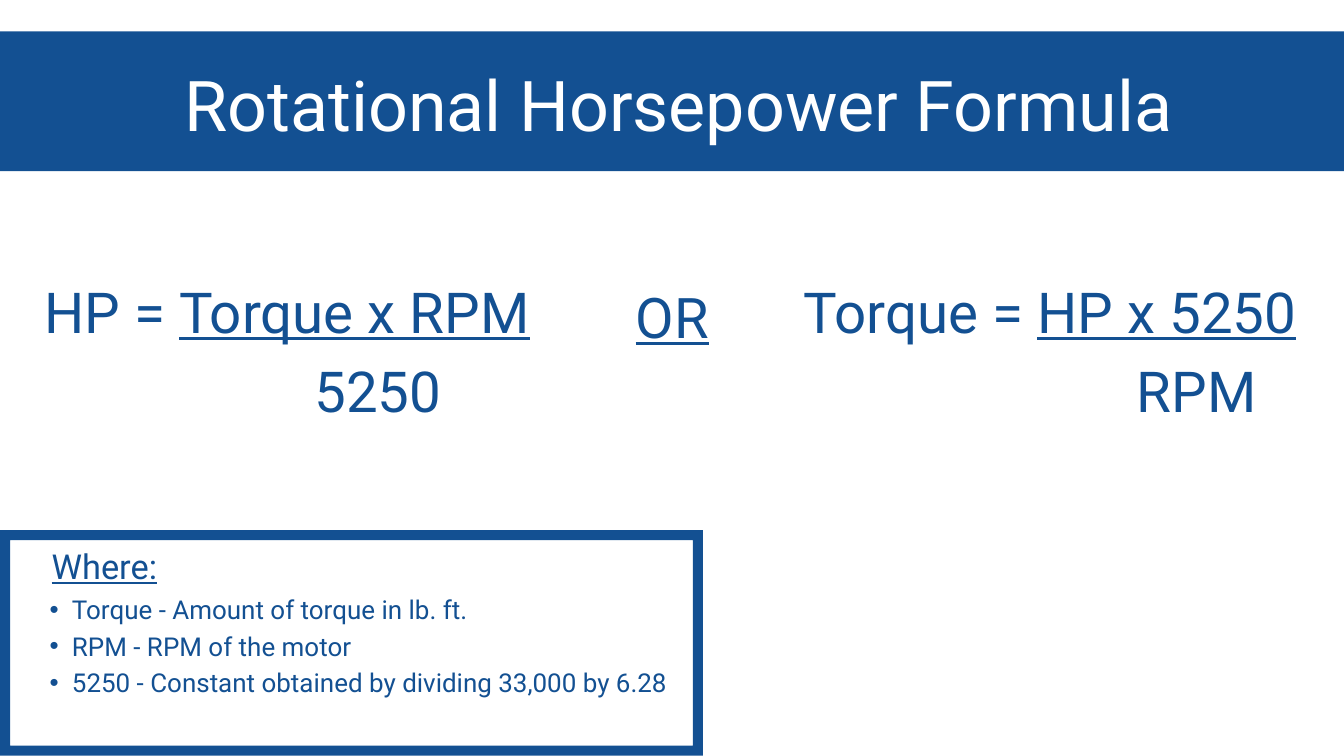
from lxml.etree import SubElement
from pptx import Presentation
from pptx.dml.color import RGBColor
from pptx.enum.shapes import MSO_SHAPE as Shape
from pptx.enum.text import PP_ALIGN as Align
from pptx.oxml.ns import qn
from pptx.util import Cm, Pt

# Content: a line is a list of (text, underlined) runs
TITLE = "Rotational Horsepower Formula"
WHERE = "Where:"
DEFINITIONS = [
    "Torque - Amount of torque in lb. ft.",
    "RPM - RPM of the motor",
    "5250 - Constant obtained by dividing 33,000 by 6.28",
]
# Result, numerator, denominator, denominator indent, box (all in cm)
FORMULAS = [
    ("HP = ", "Torque x RPM", "5250", 6.88, (1.04, 10.03, 19.61, 5.99)),
    ("Torque = ", "HP x 5250", "RPM", 11.1, (29.64, 10.03, 20.09, 5.94)),
]
COLORS = {"blue": "135092", "white": "FFFFFF"}
FONT = "Roboto"
FRAME_BOX = (0, 20.04, 26.57, 8.53)
FRAME_WIDTH = 0.38


def color(name):
    return RGBColor.from_string(COLORS[name])


def add_block(slide, preset, box):
    block = slide.shapes.add_shape(preset, *map(Cm, box))
    block.shadow.inherit = False
    block.fill.solid()
    block.fill.fore_color.rgb = color("blue")
    block.line.fill.background()
    return block


def add_lines(slide, box, lines, size, spacing, ink="blue", align=Align.CENTER):
    """Write one paragraph per line and return the paragraphs."""
    frame = slide.shapes.add_textbox(*map(Cm, box)).text_frame
    frame.word_wrap = True
    frame.margin_left = frame.margin_top = 0
    frame.margin_right = frame.margin_bottom = 0
    for index, runs in enumerate(lines):
        paragraph = frame.add_paragraph() if index else frame.paragraphs[0]
        paragraph.alignment = align
        paragraph.line_spacing = Pt(spacing)
        for text, underlined in runs:
            run = paragraph.add_run()
            run.text = text
            run.font.name = FONT
            run.font.size = Pt(size)
            run.font.underline = underlined
            run.font.color.rgb = color(ink)
    return frame.paragraphs


def indent(paragraph, left, first=0):
    properties = paragraph._p.get_or_add_pPr()
    properties.set("marL", str(Cm(left)))
    properties.set("indent", str(Cm(first)))
    return properties


def main():
    deck = Presentation()
    deck.slide_width, deck.slide_height = Cm(50.8), Cm(28.58)
    slide = deck.slides.add_slide(deck.slide_layouts[6])

    # Title band
    add_block(slide, Shape.RECTANGLE, (0, 1.19, 51.31, 5.28))
    add_lines(slide, (-3.35, 1.8, 58.01, 3.63), [[(TITLE, False)]], 75, 105, "white")

    # Framed definitions
    definition_frame = add_block(slide, Shape.FRAME, FRAME_BOX)
    definition_frame.adjustments[0] = FRAME_WIDTH / min(FRAME_BOX[2:])
    add_lines(slide, (0.76, 20.35, 6.38, 1.85), [[(WHERE, True)]], 36.8, 51.5)
    definitions = add_lines(slide, (1.04, 22.25, 24.46, 5.41),
                            [[(text, False)] for text in DEFINITIONS],
                            27.8, 39, align=Align.LEFT)
    for definition in definitions:
        definition.level = 1
        properties = indent(definition, 1.68, -0.84)
        SubElement(properties, qn("a:buFont"), typeface="Arial")
        SubElement(properties, qn("a:buChar"), char="•")

    # Formulas, each denominator centred under its fraction line
    for result, numerator, denominator, shift, box in FORMULAS:
        lines = [[(result, False), (numerator, True)], [(denominator, False)]]
        fraction = add_lines(slide, box, lines, 60.5, 84.7)
        indent(fraction[1], shift)
    add_lines(slide, (23.88, 10.24, 3.05, 3.02), [[("OR", True)]], 60, 84)

    deck.save("out.pptx")


if __name__ == "__main__":
    main()
